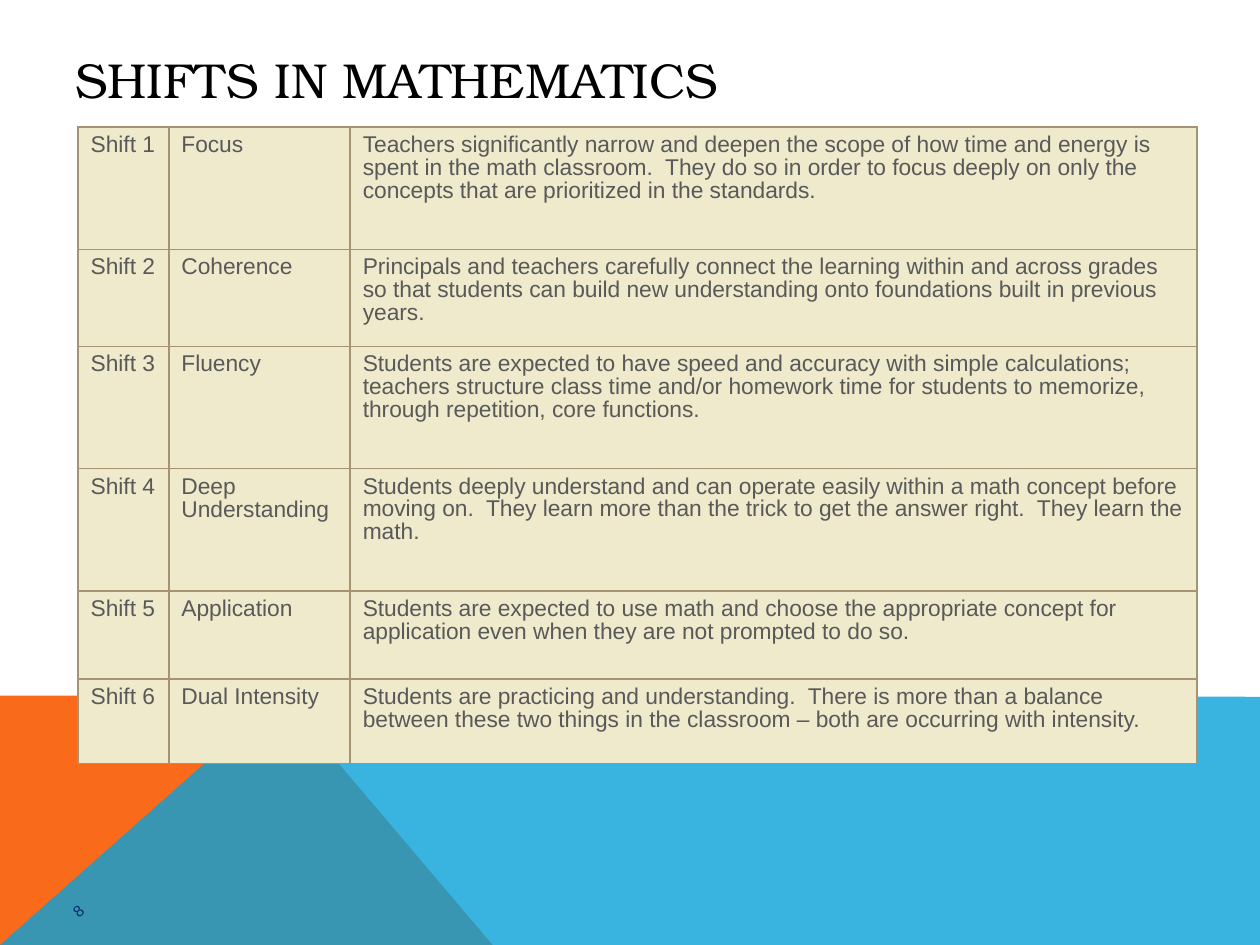
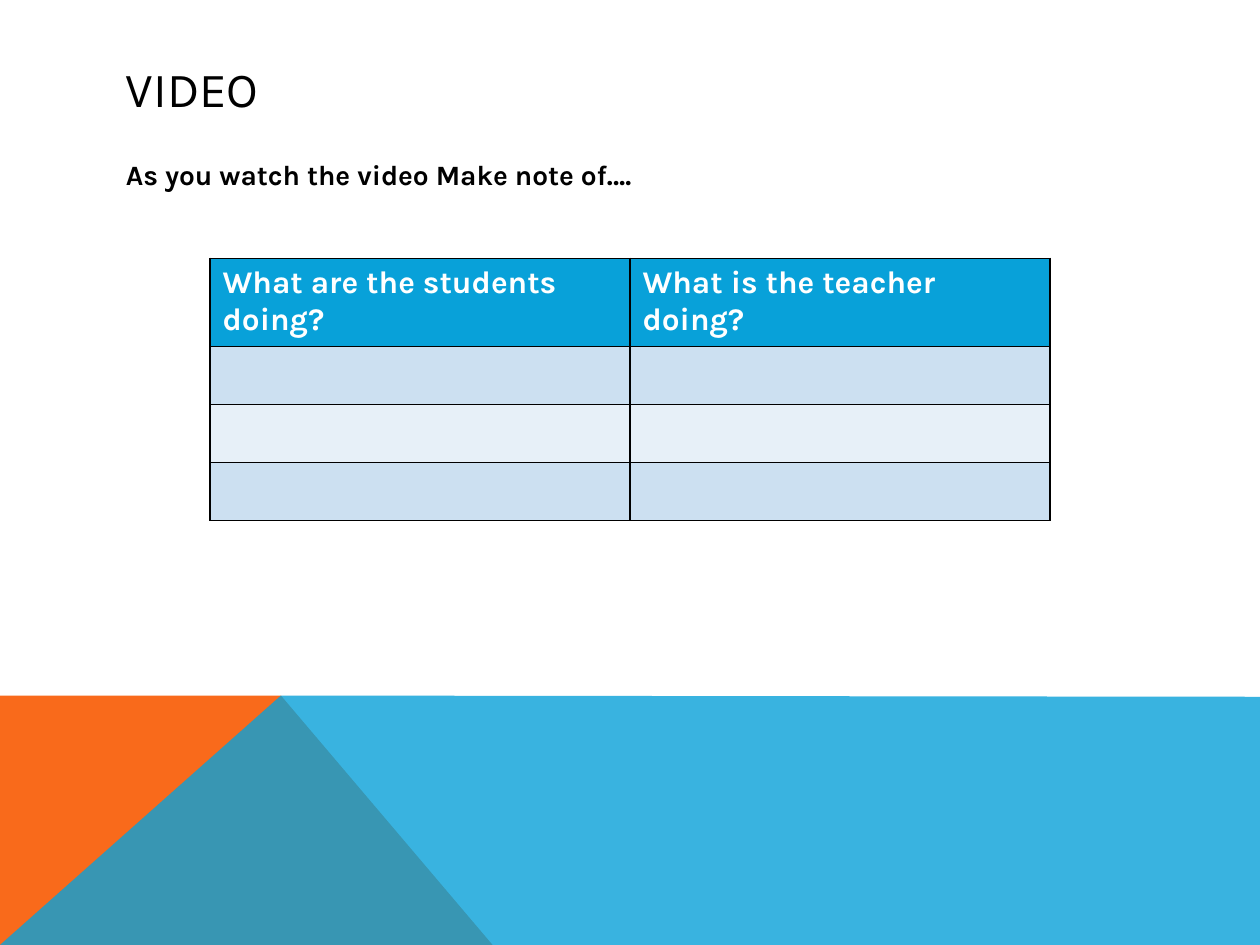
"""Build two slides about shifts in mathematics and a video observation task."""
from dataclasses import dataclass
from typing import Any

import pptx
import pptx.dml.color
import pptx.enum.text
import pptx.oxml
import pptx.oxml.ns
import pptx.util

Pt = pptx.util.Pt
RGBColor = pptx.dml.color.RGBColor
Anchor = pptx.enum.text.MSO_ANCHOR

WHITE = RGBColor(0xFF, 0xFF, 0xFF)
BLACK = RGBColor(0x00, 0x00, 0x00)
ORANGE = RGBColor(0xF9, 0x6A, 0x1B)
BLUE = RGBColor(0x08, 0xA1, 0xD9)
NAVY = RGBColor(0x0A, 0x2D, 0x6B)
CREAM = RGBColor(0xEF, 0xEA, 0xCC)
TAN = RGBColor(0xA6, 0x93, 0x72)
GRAY = RGBColor(0x59, 0x59, 0x59)
PALE_BLUE = RGBColor(0xCC, 0xE0, 0xF1)
PALER_BLUE = RGBColor(0xE7, 0xF0, 0xF8)

SLIDE_WIDTH = pptx.util.Inches(10)
SLIDE_HEIGHT = pptx.util.Inches(7.5)
COLUMN = SLIDE_WIDTH / 100
ROW = SLIDE_HEIGHT / 75

BAND_TOP = 55.2
PEAK = (22.3, BAND_TOP)


@dataclass(frozen=True)
class Area:
    """A rectangle in grid columns and rows."""

    left: float
    top: float
    width: float
    height: float

    def lengths(self) -> tuple[int, int, int, int]:
        """Return the rectangle in slide units."""
        return (columns(self.left), rows(self.top),
                columns(self.width), rows(self.height))


@dataclass(frozen=True)
class TextStyle:
    """Font, colour and paragraph settings of a text."""

    font: dict[str, Any]
    color: RGBColor
    paragraph: dict[str, Any]


@dataclass(frozen=True)
class Band:
    """A coloured outline at the foot of every slide."""

    corners: list[tuple[float, float]]
    color: RGBColor
    opacity: int


@dataclass(frozen=True)
class TableDesign:
    """Grid sizes, colours and text settings of a table."""

    area: Area
    widths: list[float]
    heights: list[float]
    row_fills: list[RGBColor]
    border: RGBColor
    style: TextStyle
    cell: dict[str, Any]


BANDS = [
    Band([(0, 75), (0, BAND_TOP), PEAK, (39.1, 75)], ORANGE, 100),
    Band([(0, 75), PEAK, (100, 55.3), (100, 75)], BLUE, 80),
]


def columns(count: float) -> int:
    """Convert grid columns to a length."""
    return round(count * COLUMN)


def rows(count: float) -> int:
    """Convert grid rows to a length."""
    return round(count * ROW)


def text_style(name: str, size: float, color: RGBColor, bold: bool = False,
               **paragraph: Any) -> TextStyle:
    """Describe a text by its font and paragraph settings."""
    return TextStyle(dict(name=name, size=Pt(size), bold=bold), color, paragraph)


TITLE_SERIF = text_style("TeX Gyre Bonum", 28, BLACK)
TITLE_SANS = text_style("Karla", 28, BLACK)
PROMPT = text_style("Karla", 16, BLACK, True, space_before=Pt(8))
PAGE_NUMBER = text_style("Arial", 12, NAVY)
SHIFT_TEXT = text_style("Arial", 13, GRAY,
                        line_spacing=Pt(13), space_before=Pt(0.2))
QUESTION = text_style("Karla", 18, WHITE, True)

SHIFTS = [
    ("Shift 1", "Focus",
     "Teachers significantly narrow and deepen the scope of how time and energy "
     "is spent in the math classroom.  They do so in order to focus deeply on "
     "only the concepts that are prioritized in the standards."),
    ("Shift 2", "Coherence",
     "Principals and teachers carefully connect the learning within and across "
     "grades so that students can build new understanding onto foundations "
     "built in previous years."),
    ("Shift 3", "Fluency",
     "Students are expected to have speed and accuracy with simple "
     "calculations; teachers structure class time and/or homework time for "
     "students to memorize, through repetition, core functions."),
    ("Shift 4", "Deep\nUnderstanding",
     "Students deeply understand and can operate easily within a math concept "
     "before moving on.  They learn more than the trick to get the answer "
     "right.  They learn the math."),
    ("Shift 5", "Application",
     "Students are expected to use math and choose the appropriate concept for "
     "application even when they are not prompted to do so."),
    ("Shift 6", "Dual Intensity",
     "Students are practicing and understanding.  There is more than a balance "
     "between these two things in the classroom – both are occurring with "
     "intensity."),
]
SHIFTS_DESIGN = TableDesign(
    Area(6.2, 10.1, 88.8, 50.4), [7.2, 14.4, 67.2],
    [9.7, 7.7, 9.7, 9.7, 7, 6.7], [CREAM] * len(SHIFTS), TAN, SHIFT_TEXT,
    dict(margin_left=columns(1), margin_right=columns(1),
         margin_top=rows(0.6), margin_bottom=0))

OBSERVATIONS = [("What are the students doing?", "What is the teacher doing?")]
OBSERVATIONS += [("", "")] * 3
OBSERVATIONS_DESIGN = TableDesign(
    Area(16.67, 20.5, 66.67, 18.2), [33.33] * 2, [4.5] + [4.6] * 3,
    [BLUE, PALE_BLUE, PALER_BLUE, PALE_BLUE], BLACK, QUESTION, {})


def apply(target: Any, values: dict[str, Any]) -> None:
    """Set every named value on the target."""
    for name, value in values.items():
        setattr(target, name, value)


def write(frame: Any, text: str, style: TextStyle) -> None:
    """Fill a text frame, one paragraph a line."""
    frame.text = text
    for paragraph in frame.paragraphs:
        apply(paragraph, style.paragraph)
        apply(paragraph.font, style.font)
        for run in paragraph.runs:
            apply(run.font, style.font)
            run.font.color.rgb = style.color


def add_text(slide: Any, area: Area, text: str, style: TextStyle,
             anchor: Any = Anchor.MIDDLE) -> Any:
    """Add a wrapped text box."""
    box = slide.shapes.add_textbox(*area.lengths())
    apply(box.text_frame, dict(word_wrap=True, vertical_anchor=anchor))
    write(box.text_frame, text, style)
    return box


def add_band(slide: Any, band: Band) -> None:
    """Draw one band as a closed outline."""
    start, *others = [(columns(x), rows(y)) for x, y in band.corners]
    builder = slide.shapes.build_freeform(*start)
    builder.add_line_segments(others, close=True)
    outline = builder.convert_to_shape()
    outline.shadow.inherit = False
    outline.line.fill.background()
    outline.fill.solid()
    outline.fill.fore_color.rgb = band.color
    if band.opacity < 100:
        color = outline.element.spPr.xpath("./a:solidFill/a:srgbClr")[0]
        alpha = pptx.oxml.parse_xml(
            f'<a:alpha {pptx.oxml.ns.nsdecls("a")} val="{band.opacity * 1000}"/>')
        color.append(alpha)


def add_borders(cell: Any, color: RGBColor) -> None:
    """Give a cell one-point lines on all four sides."""
    properties = cell._tc.get_or_add_tcPr()
    for side in "LRTB":
        properties.append(pptx.oxml.parse_xml(
            f'<a:ln{side} {pptx.oxml.ns.nsdecls("a")} w="{Pt(1)}">'
            f'<a:solidFill><a:srgbClr val="{color}"/></a:solidFill></a:ln{side}>'))


def add_table(slide: Any, texts: list[tuple[str, ...]],
              design: TableDesign) -> None:
    """Add a table with its own fills and borders."""
    table = slide.shapes.add_table(
        len(texts), len(design.widths), *design.area.lengths()).table
    apply(table, dict(first_row=False, horz_banding=False))
    for column, width in zip(table.columns, design.widths):
        column.width = columns(width)
    for row, height, fill, row_texts in zip(
            table.rows, design.heights, design.row_fills, texts):
        row.height = rows(height)
        for cell, text in zip(row.cells, row_texts):
            apply(cell, design.cell)
            add_borders(cell, design.border)
            cell.fill.solid()
            cell.fill.fore_color.rgb = fill
            write(cell.text_frame, text, design.style)


def add_slide(deck: Any) -> Any:
    """Add a blank white slide with the bands at its foot."""
    slide = deck.slides.add_slide(deck.slide_layouts[6])
    slide.background.fill.solid()
    slide.background.fill.fore_color.rgb = WHITE
    for band in BANDS:
        add_band(slide, band)
    return slide


def build_shifts(deck: Any) -> None:
    """Build the slide that lists the six shifts."""
    slide = add_slide(deck)
    add_text(slide, Area(5, 3, 90, 6.6), "SHIFTS IN MATHEMATICS", TITLE_SERIF)
    number = add_text(slide, Area(2.2, 64.2, 23.8, 2.2), "8", PAGE_NUMBER)
    number.rotation = 319
    number.text_frame.auto_size = pptx.enum.text.MSO_AUTO_SIZE.TEXT_TO_FIT_SHAPE
    add_table(slide, SHIFTS, SHIFTS_DESIGN)


def build_video(deck: Any) -> None:
    """Build the slide with the table for notes on the video."""
    slide = add_slide(deck)
    add_text(slide, Area(9, 4, 82.2, 6), "VIDEO", TITLE_SANS)
    prompt = add_text(slide, Area(9, 12, 82.2, 39.1),
                      "As you watch the video Make note of….", PROMPT, Anchor.TOP)
    indent = columns(3.8)
    properties = prompt.text_frame.paragraphs[0]._p.get_or_add_pPr()
    for name, value in dict(marL=indent, indent=-indent).items():
        properties.set(name, str(value))
    add_table(slide, OBSERVATIONS, OBSERVATIONS_DESIGN)


def main() -> None:
    """Build and save the deck."""
    deck = pptx.Presentation()
    apply(deck, dict(slide_width=SLIDE_WIDTH, slide_height=SLIDE_HEIGHT))
    build_shifts(deck)
    build_video(deck)
    deck.save("out.pptx")


if __name__ == "__main__":
    main()
